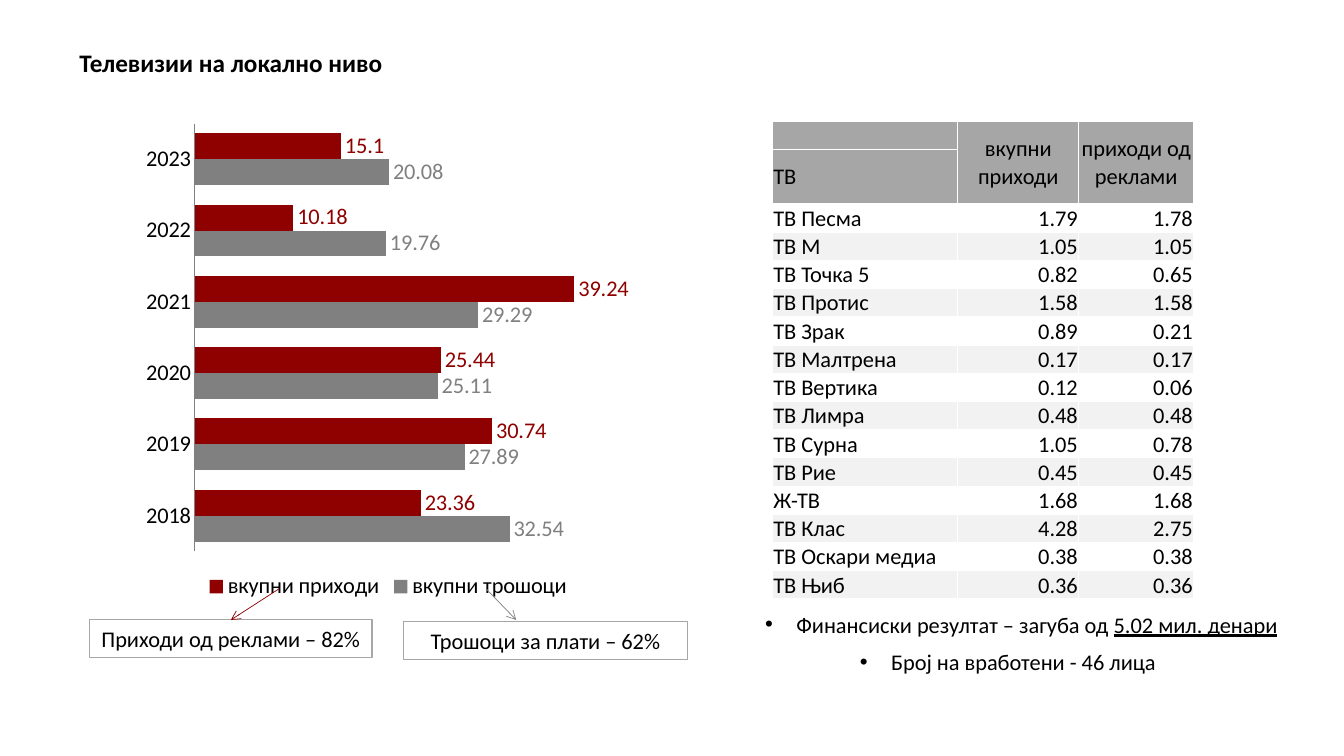
import lxml.etree
import pptx
import pptx.chart.data
import pptx.dml.color
import pptx.enum.chart
import pptx.enum.shapes
import pptx.enum.text
import pptx.oxml.ns
import pptx.util

PX = 9144
FONT = "Calibri"
COLORS = {
    "text": "000000", "income": "8F0000", "costs": "808080",
    "frame": "A6A6A6", "band": "F2F2F2", "border": "FFFFFF",
}
ALIGN = pptx.enum.text.PP_ALIGN
YEARS = ["2018", "2019", "2020", "2021", "2022", "2023"]
SERIES = [
    ("вкупни трошоци", "costs", [32.54, 27.89, 25.11, 29.29, 19.76, 20.08]),
    ("вкупни приходи", "income", [23.36, 30.74, 25.44, 39.24, 10.18, 15.1]),
]
STATIONS = [
    ("ТВ Песма", "1.79", "1.78"), ("ТВ М", "1.05", "1.05"),
    ("ТВ Точка 5", "0.82", "0.65"), ("ТВ Протис", "1.58", "1.58"),
    ("ТВ Зрак", "0.89", "0.21"), ("ТВ Малтрена", "0.17", "0.17"),
    ("ТВ Вертика", "0.12", "0.06"), ("ТВ Лимра", "0.48", "0.48"),
    ("ТВ Сурна", "1.05", "0.78"), ("ТВ Рие", "0.45", "0.45"),
    ("Ж-ТВ", "1.68", "1.68"), ("ТВ Клас", "4.28", "2.75"),
    ("ТВ Оскари медиа", "0.38", "0.38"), ("ТВ Њиб", "0.36", "0.36"),
]


def px(*lengths):
    """Turn pixel lengths into EMU."""
    return [pptx.util.Emu(length * PX) for length in lengths]


def rgb(name):
    """Look up a named colour."""
    return pptx.dml.color.RGBColor.from_string(COLORS[name])


def add_xml(parent, tag, **attributes):
    """Append a drawing element to its parent."""
    return lxml.etree.SubElement(parent, pptx.oxml.ns.qn(tag), attributes)


def style_font(font, color="text", **values):
    """Apply the common font and any extra format values."""
    for name, value in {"name": FONT, "size": pptx.util.Pt(16), **values}.items():
        setattr(font, name, value)
    font.color.rgb = rgb(color)


def write(frame, runs, align, **values):
    """Write (text, format) runs into the first paragraph of a frame."""
    for name, value in {"word_wrap": True, **values}.items():
        setattr(frame, name, value)
    paragraph = frame.paragraphs[0]
    paragraph.alignment = align
    for text, run_format in runs:
        run = paragraph.add_run()
        run.text = text
        style_font(run.font, **run_format)
    return paragraph


def add_text(slide, box, runs, align, bullet=False):
    """Place a text box, with a hanging bullet if wanted."""
    shape = slide.shapes.add_textbox(*px(*box))
    paragraph = write(shape.text_frame, runs, align)
    if bullet:
        indent = px(31)[0]
        properties = paragraph._p.get_or_add_pPr()
        properties.set("marL", str(indent))
        properties.set("indent", str(-indent))
        add_xml(properties, "a:buFont", typeface="Arial")
        add_xml(properties, "a:buChar", char="•")


def add_callout(slide, box, text, arrow_start, arrow_end, color):
    """Place a framed note and the arrow from the legend, relative to its box."""
    left, top, width, height = box
    shape = slide.shapes.add_shape(pptx.enum.shapes.MSO_SHAPE.RECTANGLE, *px(*box))
    shape.shadow.inherit = False
    shape.fill.background()
    shape.line.color.rgb = rgb("frame")
    shape.line.width = pptx.util.Pt(0.75)
    write(shape.text_frame, [(text, {})], ALIGN.CENTER)
    arrow = slide.shapes.add_connector(
        pptx.enum.shapes.MSO_CONNECTOR.STRAIGHT,
        *px(left + arrow_start, 584, left + arrow_end, 615))
    arrow.line.color.rgb = rgb(color)
    arrow.line.width = pptx.util.Pt(0.5)
    add_xml(arrow.line._get_or_add_ln(), "a:tailEnd", type="arrow")
    add_xml(arrow._element.spPr, "a:effectLst")


def add_bar_chart(slide, box):
    """Place the clustered bars of income and costs by year."""
    data = pptx.chart.data.CategoryChartData()
    data.categories = YEARS
    for name, _, values in SERIES:
        data.add_series(name, values)
    kind = pptx.enum.chart.XL_CHART_TYPE.BAR_CLUSTERED
    chart = slide.shapes.add_chart(kind, *px(*box), data).chart
    style_font(chart.font)
    chart.has_title = False
    chart.has_legend = True
    chart.legend.position = pptx.enum.chart.XL_LEGEND_POSITION.BOTTOM
    chart.legend.include_in_layout = False
    style_font(chart.legend.font)
    for name, value in {"minimum_scale": 0, "maximum_scale": 45,
                        "has_major_gridlines": False, "visible": False}.items():
        setattr(chart.value_axis, name, value)
    axis = chart.category_axis
    axis.major_tick_mark = pptx.enum.chart.XL_TICK_MARK.NONE
    axis.format.line.color.rgb = rgb("costs")
    style_font(axis.tick_labels.font)
    plot = chart.plots[0]
    for name, value in {"gap_width": 75, "overlap": 0, "vary_by_categories": False}.items():
        setattr(plot, name, value)
    for series, (_, color, _) in zip(plot.series, SERIES):
        series.format.fill.solid()
        series.format.fill.fore_color.rgb = rgb(color)
        labels = series.data_labels
        labels.show_value = True
        labels.position = pptx.enum.chart.XL_LABEL_POSITION.OUTSIDE_END
        style_font(labels.font, color)


def fill_cell(cell, text, align, color):
    """Set the text, margins, white borders and fill of a cell."""
    margins = dict(zip(("margin_left", "margin_right", "margin_top", "margin_bottom"),
                       px(1, 1, 1, 0)))
    for name, value in margins.items():
        setattr(cell, name, value)
    cell.vertical_anchor = pptx.enum.text.MSO_ANCHOR.MIDDLE
    if text:
        write(cell.text_frame, [(text, {})], align)
    else:
        add_xml(cell.text_frame.paragraphs[0]._p, "a:endParaRPr", sz="1600")
    for side in ("L", "R", "T", "B"):
        line = add_xml(cell._tc.get_or_add_tcPr(), "a:ln" + side, w="12700")
        add_xml(add_xml(line, "a:solidFill"), "a:srgbClr", val=COLORS["border"])
    if color:
        cell.fill.solid()
        cell.fill.fore_color.rgb = rgb(color)
    else:
        cell.fill.background()


def add_station_table(slide, box):
    """Place the table of stations with a two-row header."""
    rows = [("", "вкупни приходи", "приходи од реклами"), ("ТВ", "", "")] + STATIONS
    table = slide.shapes.add_table(len(rows), 3, *px(*box)).table
    for column, width in zip(table.columns, px(184, 120, 114)):
        column.width = width
    for index, values in enumerate(rows):
        header = index < 2
        table.rows[index].height = px(54 if index == 1 else 28)[0]
        color = "frame" if header else "band" if index % 2 else None
        for column, text in enumerate(values):
            value_align = ALIGN.CENTER if header else ALIGN.RIGHT
            fill_cell(table.cell(index, column), text,
                      value_align if column else ALIGN.LEFT, color)
    for column in (1, 2):
        table.cell(0, column).merge(table.cell(1, column))


def build_slide(presentation):
    """Place every region of the local television slide."""
    slide = presentation.slides.add_slide(presentation.slide_layouts[6])
    add_text(slide, (34, 42, 390, 42),
             [("Телевизии на локално ниво", {"size": pptx.util.Pt(18), "bold": True})],
             ALIGN.CENTER)
    add_station_table(slide, (766, 120, 418, 474))
    add_text(slide, (731, 601, 564, 37),
             [("Финансиски резултат – загуба од ", {}),
              ("5.02 мил. денари", {"underline": True})], ALIGN.CENTER, bullet=True)
    add_text(slide, (843, 638, 340, 37),
             [("Број на вработени - 46 лица", {})], ALIGN.LEFT, bullet=True)
    add_bar_chart(slide, (135, 113, 500, 487))
    add_callout(slide, (89, 615, 280, 37), "Приходи од реклами – 82%", 188, 140, "income")
    add_callout(slide, (400, 617, 282, 37), "Трошоци за плати – 62%", 82, 112, "costs")


def main():
    """Build the presentation and save it."""
    presentation = pptx.Presentation()
    presentation.slide_width, presentation.slide_height = px(1333, 750)
    build_slide(presentation)
    presentation.save("out.pptx")


if __name__ == "__main__":
    main()
